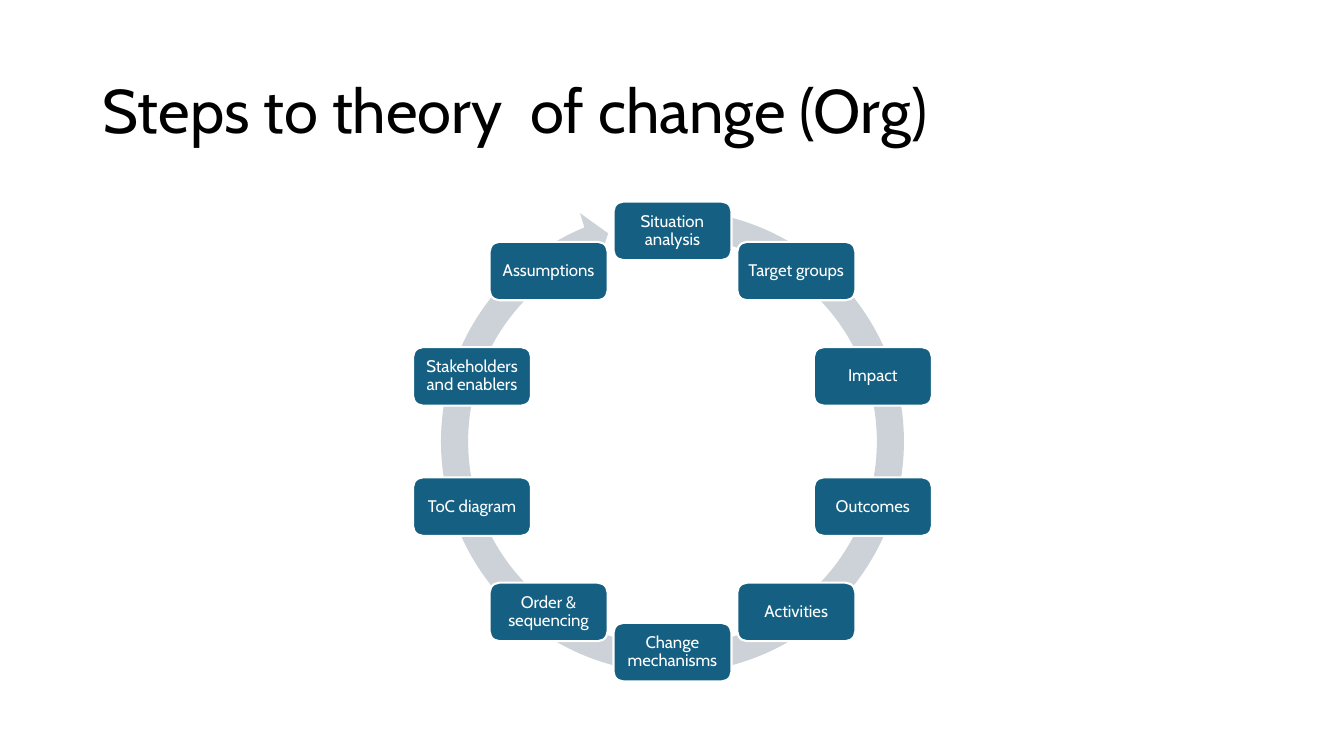
"""Build a slide with a ten-step theory of change cycle."""
import math
from dataclasses import dataclass

from pptx import Presentation
from pptx import util as u
from pptx.dml.color import RGBColor
from pptx.enum import shapes, text


@dataclass(frozen=True)
class Theme:
    """Colours, font and type sizes."""
    font: str = "Cabin"
    ink: str = "000000"
    paper: str = "FFFFFF"
    node: str = "156082"
    ring: str = "CCD2D8"
    title_size: int = 44
    node_size: int = 12


def write(tf, words, *, font, size, color, align, margins=None):
    """Fill a text frame with one formatted paragraph."""
    tf.word_wrap = True
    tf.auto_size = text.MSO_AUTO_SIZE.NONE
    tf.vertical_anchor = text.MSO_ANCHOR.MIDDLE
    if margins is not None:
        tf.margin_left = tf.margin_right = u.Inches(margins)
        tf.margin_top = tf.margin_bottom = u.Inches(margins)
    p = tf.paragraphs[0]
    p.alignment = align
    p.line_spacing = 0.9
    r = p.add_run()
    r.text = words
    r.font.name = font
    r.font.size = u.Pt(size)
    r.font.color.rgb = RGBColor.from_string(color)


class CycleSlide:
    """Hold the theme and the current slide."""

    def __init__(self, prs, theme):
        """Add a title-only slide."""
        self.theme = theme
        self.s = prs.slides.add_slide(prs.slide_layouts[5])

    def title(self, words, x, y, w, h):
        """Place and format the title."""
        sp = self.s.shapes.title
        sp.left, sp.top, sp.width, sp.height = map(u.Inches, (x, y, w, h))
        write(sp.text_frame, words, font=self.theme.font,
              size=self.theme.title_size, color=self.theme.ink,
              align=text.PP_ALIGN.LEFT)

    def shape(self, kind, cx, cy, w, h, fill):
        """Add a filled preset shape around a centre."""
        box = map(u.Inches, (cx - w / 2, cy - h / 2, w, h))
        sp = self.s.shapes.add_shape(kind, *box)
        sp.shadow.inherit = False
        sp.fill.solid()
        sp.fill.fore_color.rgb = RGBColor.from_string(fill)
        sp.line.fill.background()
        return sp

    def ring(self, cx, cy, size):
        """Add the circular arrow behind the steps."""
        sp = self.shape(shapes.MSO_SHAPE.CIRCULAR_ARROW, cx, cy, size, size,
                        self.theme.ring)
        for i, value in enumerate((0.055, 3.307, 148.395, 167.67, 0.058)):
            sp.adjustments[i] = value

    def node(self, words, cx, cy):
        """Add one step as a rounded box."""
        sp = self.shape(shapes.MSO_SHAPE.ROUNDED_RECTANGLE, cx, cy, 1.17, 0.58,
                        self.theme.node)
        sp.line.color.rgb = RGBColor.from_string(self.theme.paper)
        sp.line.width = u.Pt(1.5)
        write(sp.text_frame, words, font=self.theme.font,
              size=self.theme.node_size, color=self.theme.paper,
              align=text.PP_ALIGN.CENTER, margins=0.05)

    def cycle(self, steps, cx, cy, radius):
        """Spread the steps clockwise from the top of a circle."""
        for i, words in enumerate(steps):
            angle = math.tau * i / len(steps)
            self.node(words, cx + radius * math.sin(angle),
                      cy - radius * math.cos(angle))


def main():
    """Build and save the presentation."""
    prs = Presentation()
    prs.slide_width, prs.slide_height = u.Inches(13.33), u.Inches(7.5)
    s = CycleSlide(prs, Theme())
    s.title("Steps to theory  of change (Org)", 0.92, 0.4, 11.5, 1.45)
    s.ring(6.67, 4.38, 4.89)
    s.cycle(["Situation analysis", "Target groups", "Impact", "Outcomes",
             "Activities", "Change mechanisms", "Order & sequencing",
             "ToC diagram", "Stakeholders and enablers", "Assumptions"],
            6.67, 4.38, 2.09)
    prs.save("out.pptx")


if __name__ == "__main__":
    main()
